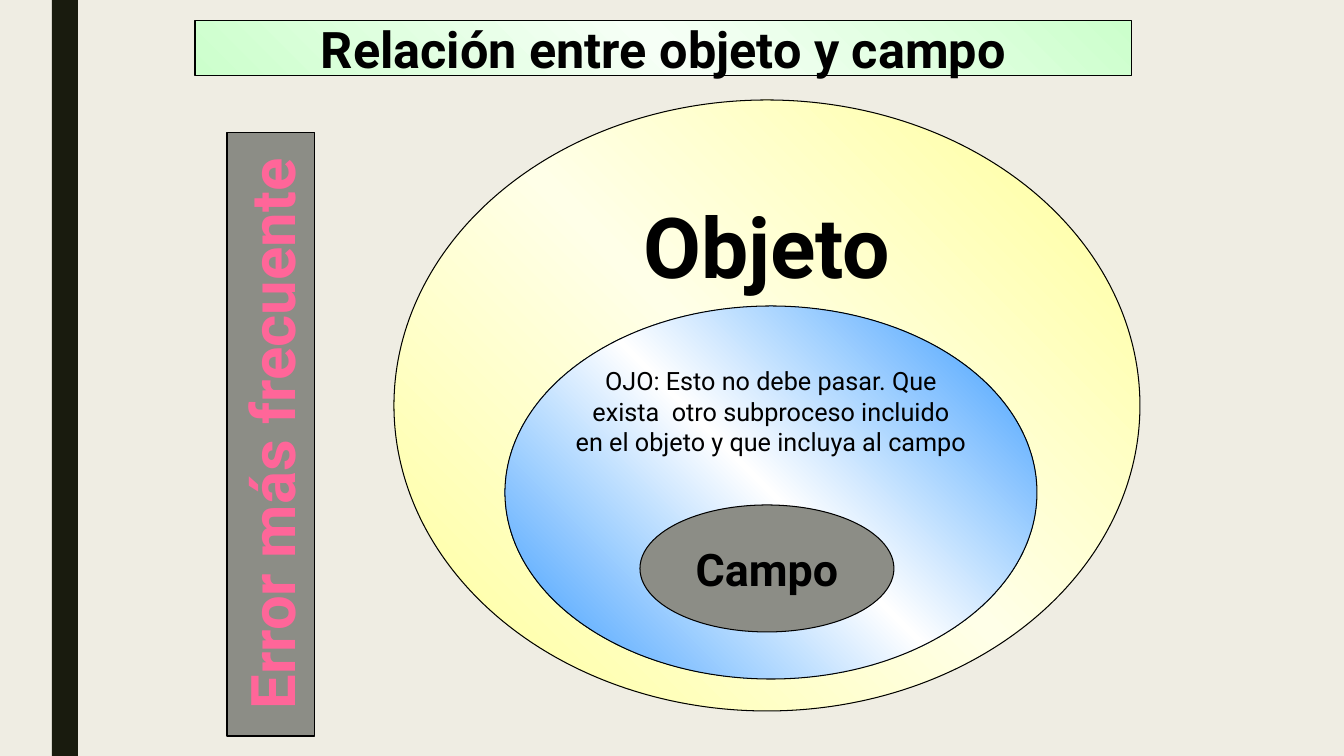
import copy
from dataclasses import dataclass

import pptx
import pptx.dml.color
import pptx.enum.shapes
import pptx.enum.text
import pptx.oxml.ns
import pptx.util

EMU_PER_PX = 914400 / 100.8
SHAPE = pptx.enum.shapes.MSO_SHAPE
ANCHOR = pptx.enum.text.MSO_ANCHOR


@dataclass(frozen=True)
class Theme:
    font: str = "Roboto"
    background: str = "EFEDE3"
    stripe: str = "191B0E"
    ink: str = "000000"
    gray: str = "8C8D86"
    pink: str = "FF6699"
    yellow: tuple = ("FFFF99", "FFFFE8", "FFFF99")
    blue: tuple = ("3399FF", "FFFFFF", "3399FF")
    green: tuple = ("CCFFCC", "F6FFF6", "CCFFCC")
    title_size: int = 36
    object_size: int = 60
    field_size: int = 32
    error_size: int = 44
    note_size: int = 18
    outline: float = 0.75


THEME = Theme()


def px(length):
    return pptx.util.Emu(round(length * EMU_PER_PX))


def rgb(color):
    return pptx.dml.color.RGBColor.from_string(color)


def fill_gradient(shape, colors):
    """Blend three colours diagonally from lower left to upper right."""
    shape.fill.gradient()
    shape.fill.gradient_angle = 45
    stop_list = shape._element.spPr.find(".//" + pptx.oxml.ns.qn("a:gsLst"))
    stop_list.insert(1, copy.deepcopy(stop_list[0]))
    for index, (stop, color) in enumerate(zip(shape.fill.gradient_stops, colors)):
        stop.position = index / 2
        stop.color.rgb = rgb(color)


def add_figure(slide, kind, box, fill, outlined=True):
    """Draw a preset shape; a tuple of colours as fill makes a gradient."""
    figure = slide.shapes.add_shape(kind, *map(px, box))
    figure.shadow.inherit = False
    if isinstance(fill, tuple):
        fill_gradient(figure, fill)
    else:
        figure.fill.solid()
        figure.fill.fore_color.rgb = rgb(fill)
    if outlined:
        figure.line.color.rgb = rgb(THEME.ink)
        figure.line.width = pptx.util.Pt(THEME.outline)
    else:
        figure.line.fill.background()
    return figure


def write(figure, text, size, bold=True, color=THEME.ink, anchor=ANCHOR.MIDDLE):
    frame = figure.text_frame
    frame.word_wrap = False
    frame.vertical_anchor = anchor
    frame.text = text
    for paragraph in frame.paragraphs:
        paragraph.alignment = pptx.enum.text.PP_ALIGN.CENTER
        for run in paragraph.runs:
            run.font.name = THEME.font
            run.font.size = pptx.util.Pt(size)
            run.font.bold = bold
            run.font.color.rgb = rgb(color)


def add_title(slide, box):
    banner = add_figure(slide, SHAPE.RECTANGLE, box, THEME.green)
    write(banner, "Relación entre objeto y campo", THEME.title_size)


def add_nested_ovals(slide, box):
    """Place the field inside the subprocess inside the object."""
    left, top, width, height = box
    objeto = add_figure(slide, SHAPE.OVAL, box, THEME.yellow)
    write(objeto, "Objeto", THEME.object_size, anchor=ANCHOR.TOP)

    subproceso = add_figure(
        slide, SHAPE.OVAL,
        (left + 111, top + 206, width - 214, height - 238), THEME.blue)
    write(subproceso,
          "OJO: Esto no debe pasar. Que\n"
          "exista  otro subproceso incluido\n"
          "en el objeto y que incluya al campo",
          THEME.note_size, bold=False, anchor=ANCHOR.TOP)

    campo_width, campo_height = 254, 127
    campo = add_figure(
        slide, SHAPE.OVAL,
        (left + (width - campo_width) / 2, top + 405, campo_width, campo_height),
        THEME.gray)
    write(campo, "Campo", THEME.field_size)


def add_error_label(slide, box):
    """Fill the upright box with a label that reads from bottom to top."""
    left, top, width, height = box
    shift = (height - width) / 2
    label = add_figure(slide, SHAPE.RECTANGLE,
                       (left - shift, top + shift, height, width), THEME.gray)
    label.rotation = 270
    write(label, "Error más frecuente", THEME.error_size, color=THEME.pink)


def main():
    deck = pptx.Presentation()
    deck.slide_width, deck.slide_height = px(1344), px(756)
    slide = deck.slides.add_slide(deck.slide_layouts[6])
    slide.background.fill.solid()
    slide.background.fill.fore_color.rgb = rgb(THEME.background)

    add_figure(slide, SHAPE.RECTANGLE, (52, 0, 26, 756), THEME.stripe, outlined=False)
    add_nested_ovals(slide, (394, 100, 746, 611))
    add_title(slide, (195, 21, 937, 55))
    add_error_label(slide, (227, 132, 88, 604))
    deck.save("out.pptx")


if __name__ == "__main__":
    main()
